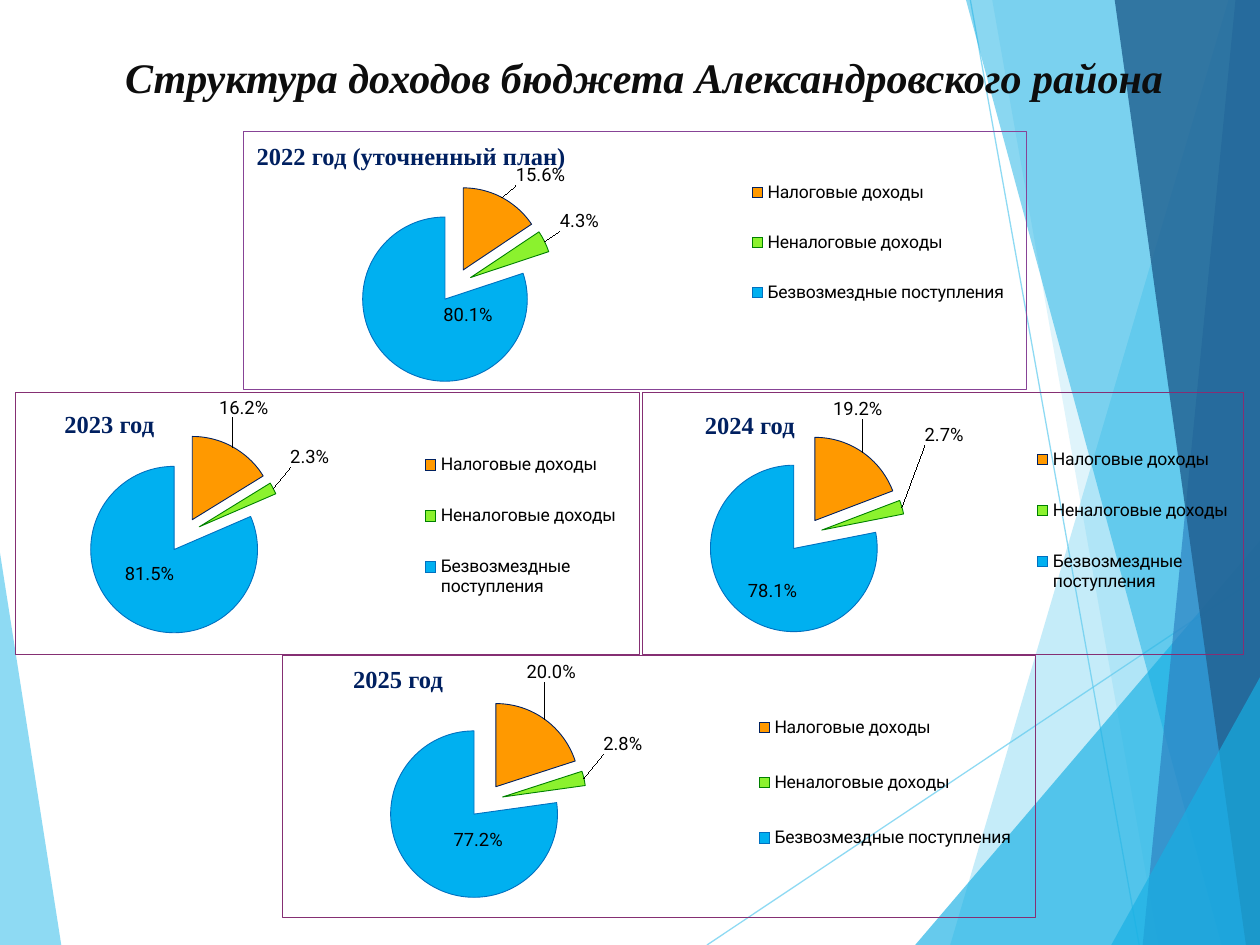
from lxml import etree
from pptx import Presentation
from pptx import util as u
from pptx.chart.data import CategoryChartData
from pptx.dml.color import RGBColor
from pptx.enum import chart as kinds, shapes, text
from pptx.oxml import parse_xml
from pptx.oxml.ns import nsdecls, qn

Pt = u.Pt

# Content
TITLE = "Структура доходов бюджета Александровского района"
INCOME = ["Налоговые доходы", "Неналоговые доходы", "Безвозмездные поступления"]

# Boxes are left, top, width, height; label shifts are points from the default
# place; plot and legend are x, y, width, height as shares of the chart
YEARS = [
    dict(name="2022 год (уточненный план)", values=[15.6, 4.3, 80.1],
         heading=(133, 77, 204, 25), frame=(139, 75, 448, 148), border="874396",
         shifts=[(6, -3), (5, -4), (27, -10)],
         plot=(0, 0.21, 0.54, 0.77), legend=(0.63, 0.08, 0.36, 0.7)),
    dict(name="2023 год", values=[16.2, 2.3, 81.5],
         heading=(0, 230, 125, 25), frame=(8.5, 224, 357, 150), border="852F73",
         shifts=[(-10, -13), (6, -10), (-1, -6)],
         plot=(0, 0.16, 0.54, 0.77), legend=(0.64, 0.12, 0.34, 0.78)),
    dict(name="2024 год", values=[19.2, 2.7, 78.1],
         heading=(366, 231, 125, 25), frame=(367, 224, 344, 150), border="852F73",
         shifts=[(-19, -15), (9, -34), (3, 6)],
         plot=(0, 0.16, 0.54, 0.77), legend=(0.64, 0.1, 0.35, 0.78)),
    dict(name="2025 год", values=[20, 2.8, 77.2],
         heading=(165, 376, 125, 25), frame=(161, 374.5, 431, 150), border="852F73",
         shifts=[(-13, -18), (7, -13), (18, -3)],
         plot=(0, 0.17, 0.54, 0.77), legend=(0.62, 0.1, 0.36, 0.77)),
]

THEME = dict(
    serif="Times New Roman", sans="Roboto",
    title_size=24, heading_size=14, chart_size=10, label_size=10.5,
    title="0D0D0D", heading="002060", chart="000000",
    sky="5FCBEF", cyan="17B0E4", blue="2E83C3", navy="226292",
    slices=[("FF9900", "002060"), ("8BF22E", "008000"), ("00B0F0", "0070C0")],
)

# Background: lines, then polygons as (colour, opacity in percent, corners)
RAYS = [((404, 540), (720, 329)), ((554.5, 0), (651, 540))]
SHARDS = [
    ("sky", 70, [(0, 316), (35, 540), (0, 540)]),
    ("sky", 36, [(702, 0), (543, 540), (720, 540), (720, 0)]),
    ("sky", 20, [(567, 0), (662, 540), (720, 540), (720, 0)]),
    ("cyan", 66, [(523, 540), (720, 309), (720, 540)]),
    ("cyan", 50, [(552, 0), (698.5, 540), (720, 540), (720, 0)]),
    ("blue", 70, [(706.5, 0), (653, 540), (720, 540), (720, 0)]),
    ("navy", 82, [(637, 0), (711.5, 540), (720, 540), (720, 0)]),
    ("cyan", 66, [(635, 540), (720, 387), (720, 540)]),
]


def rgb(code):
    return RGBColor.from_string(code)


def set_opacity(shape, percent):
    color = next(shape._element.spPr.iter(qn("a:srgbClr")))
    etree.SubElement(color, qn("a:alpha"), val=str(percent * 1000))


def draw_ray(page, start, end):
    ray = page.shapes.add_connector(
        shapes.MSO_CONNECTOR.STRAIGHT, *map(Pt, start + end))
    ray.line.color.rgb = rgb(THEME["sky"])
    ray.line.width = Pt(0.75)
    set_opacity(ray, 70)
    etree.SubElement(ray._element.spPr, qn("a:effectLst"))


def draw_shard(page, color, opacity, corners):
    builder = page.shapes.build_freeform(*corners[0], scale=Pt(1))
    builder.add_line_segments(corners[1:], close=True)
    shard = builder.convert_to_shape()
    shard.shadow.inherit = False
    shard.fill.solid()
    shard.fill.fore_color.rgb = rgb(THEME[color])
    shard.line.fill.background()
    set_opacity(shard, opacity)


def write(box, place, words, role):
    box.left, box.top, box.width, box.height = map(Pt, place)
    frame = box.text_frame
    frame.word_wrap = True
    frame.auto_size = text.MSO_AUTO_SIZE.NONE
    frame.vertical_anchor = text.MSO_ANCHOR.TOP
    para = frame.paragraphs[0]
    para.text = words
    para.alignment = text.PP_ALIGN.CENTER
    para.font.name = THEME["serif"]
    para.font.size = Pt(THEME[role + "_size"])
    para.font.bold = True
    para.font.italic = role == "title"
    para.font.color.rgb = rgb(THEME[role])


def layout(x, y, width=None, height=None, inner=False):
    """Manual chart layout; without a size it is a shift of a label."""
    parts = '<c:layoutTarget val="inner"/>' if inner else ""
    if width:
        parts += '<c:xMode val="edge"/><c:yMode val="edge"/>'
    parts += f'<c:x val="{x:.4f}"/><c:y val="{y:.4f}"/>'
    if width:
        parts += f'<c:w val="{width}"/><c:h val="{height}"/>'
    return f'<c:layout {nsdecls("c")}><c:manualLayout>{parts}</c:manualLayout></c:layout>'


def label_xml(year):
    """Percent labels, each moved from its default place, with leader lines."""
    size = int(THEME["label_size"] * 100)
    number = '<c:numFmt formatCode="0.0%" sourceLinked="0"/>'
    font = (f'<c:txPr><a:bodyPr/><a:p><a:pPr><a:defRPr sz="{size}">'
            f'<a:latin typeface="{THEME["sans"]}"/></a:defRPr></a:pPr></a:p></c:txPr>')
    flags = "".join(
        f'<c:show{name} val="{int(name == "Percent")}"/>'
        for name in ("LegendKey", "Val", "CatName", "SerName", "Percent", "BubbleSize"))
    width, height = year["frame"][2:]
    labels = ""
    for index, (x, y) in enumerate(year["shifts"]):
        spot = "ctr" if index == 2 else "outEnd"
        labels += (f'<c:dLbl><c:idx val="{index}"/>{layout(x / width, y / height)}'
                   f'{number}{font}<c:dLblPos val="{spot}"/>{flags}</c:dLbl>')
    return (f'<c:dLbls {nsdecls("c", "a")}>{labels}{number}{font}{flags}'
            '<c:showLeaderLines val="1"/></c:dLbls>')


def add_pie(page, year):
    data = CategoryChartData()
    data.categories = INCOME
    data.add_series("Доходы", year["values"])
    chart = page.shapes.add_chart(
        kinds.XL_CHART_TYPE.PIE, *map(Pt, year["frame"]), data).chart
    chart.has_title = False
    chart.font.name = THEME["sans"]
    chart.font.size = Pt(THEME["chart_size"])
    chart.font.color.rgb = rgb(THEME["chart"])
    chart.plots[0].vary_by_categories = True

    # Slices
    series = chart.plots[0].series[0]
    explosion = parse_xml(f'<c:explosion {nsdecls("c")} val="21"/>')
    series._element.find(qn("c:tx")).addnext(explosion)
    for index, (fill, line) in enumerate(THEME["slices"]):
        style = series.points[index].format
        style.fill.solid()
        style.fill.fore_color.rgb = rgb(fill)
        style.line.color.rgb = rgb(line)
        style.line.width = Pt(0.5)
    series._element.find(qn("c:cat")).addprevious(parse_xml(label_xml(year)))

    # Legend and plot area
    chart.has_legend = True
    chart.legend.position = kinds.XL_LEGEND_POSITION.RIGHT
    chart.legend.include_in_layout = False
    legend = chart.legend._element
    area = chart._chartSpace.chart.plotArea
    for part in (legend, area):
        for old in part.findall(qn("c:layout")):
            part.remove(old)
    legend.find(qn("c:legendPos")).addnext(parse_xml(layout(*year["legend"])))
    area.insert(0, parse_xml(layout(*year["plot"], inner=True)))

    # Border
    chart._chartSpace.chart.addnext(parse_xml(
        f'<c:spPr {nsdecls("c", "a")}><a:noFill/><a:ln w="6350"><a:solidFill>'
        f'<a:srgbClr val="{year["border"]}"/></a:solidFill></a:ln></c:spPr>'))


deck = Presentation()
deck.slide_width, deck.slide_height = Pt(720), Pt(540)
page = deck.slides.add_slide(deck.slide_layouts[5])

# Background
draw_shard(page, *SHARDS[0])
for ray in RAYS:
    draw_ray(page, *ray)
for shard in SHARDS[1:]:
    draw_shard(page, *shard)

# Title, in front of the background
title = page.shapes.title
page.shapes._spTree.append(title._element)
write(title, (28, 26, 680, 36), TITLE, "title")

# One pie and heading for each year
for year in YEARS:
    add_pie(page, year)
    heading = page.shapes.add_textbox(0, 0, 0, 0)
    write(heading, year["heading"], year["name"], "heading")

deck.save("out.pptx")
